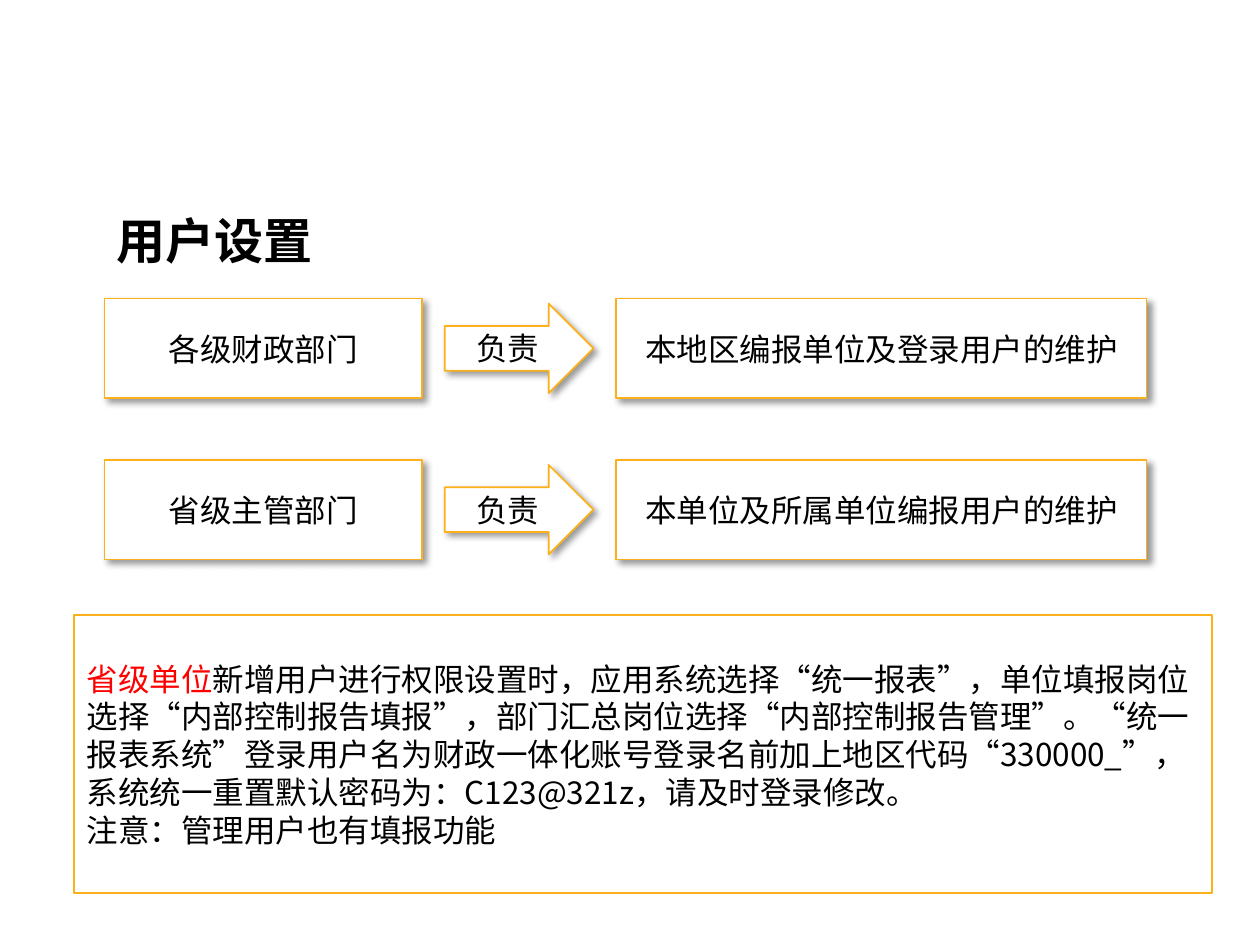
from dataclasses import dataclass

from lxml import etree
from pptx import Presentation
from pptx.dml.color import RGBColor
from pptx.enum.shapes import MSO_SHAPE
from pptx.enum.text import MSO_ANCHOR, MSO_AUTO_SIZE, PP_ALIGN
from pptx.oxml.ns import qn
from pptx.util import Inches, Pt

RECTANGLE = MSO_SHAPE.RECTANGLE
ARROW = MSO_SHAPE.RIGHT_ARROW
PROCESS = MSO_SHAPE.FLOWCHART_PROCESS
MIDDLE, TOP = MSO_ANCHOR.MIDDLE, MSO_ANCHOR.TOP
CENTER, LEFT = PP_ALIGN.CENTER, PP_ALIGN.LEFT
GROW = MSO_AUTO_SIZE.SHAPE_TO_FIT_TEXT

COLORS = {
    "white": "FFFFFF",
    "border": "FCB11C",
    "text": "000000",
    "emphasis": "FF0000",
    "shadow": "000000",
}
FONT = "Noto Sans CJK SC"
ROW_TOP, ROW_PITCH, BOX_HEIGHT = 2.37, 1.28, 0.79
ARROW_HEIGHT = 0.71


@dataclass
class TextRun:
    text: str
    color: str = "text"
    size: int = 18
    bold: bool = False


@dataclass
class Panel:
    left: float
    top: float
    width: float
    height: float
    paragraphs: list[list[TextRun]]
    kind: MSO_SHAPE = RECTANGLE
    alignment: PP_ALIGN = CENTER
    anchor: MSO_ANCHOR = MIDDLE
    outlined: bool = True
    shadowed: bool = True


@dataclass
class Duty:
    department: str
    task: str


DUTIES = [
    Duty("各级财政部门", "本地区编报单位及登录用户的维护"),
    Duty("省级主管部门", "本单位及所属单位编报用户的维护"),
]
INSTRUCTIONS = [
    [
        TextRun("省级单位", "emphasis"),
        TextRun(
            "新增用户进行权限设置时，应用系统选择“统一报表”，单位填报岗位"
            "选择“内部控制报告填报”，部门汇总岗位选择“内部控制报告管理”。"
            "“统一报表系统”登录用户名为财政一体化账号登录名前加上地区代码"
            "“330000_”，系统统一重置默认密码为：C123@321z，请及时登录修改。"
        ),
    ],
    [TextRun("注意：管理用户也有填报功能")],
]


def rgb(name: str) -> RGBColor:
    return RGBColor.from_string(COLORS[name])


def add_shadow(shape) -> None:
    effects = shape._element.spPr.find(qn("a:effectLst"))
    shadow = etree.SubElement(
        effects, qn("a:outerShdw"),
        blurRad=str(Pt(4)), dist=str(Pt(3)), dir=str(45 * 60000),
        algn="tl", rotWithShape="0",
    )
    color = etree.SubElement(shadow, qn("a:srgbClr"), val=COLORS["shadow"])
    etree.SubElement(color, qn("a:alpha"), val="40000")


def add_run(paragraph, text_run: TextRun) -> None:
    run = paragraph.add_run()
    run.text = text_run.text
    run.font.size = Pt(text_run.size)
    run.font.bold = text_run.bold
    run.font.color.rgb = rgb(text_run.color)
    run.font.name = FONT
    etree.SubElement(run.font._element, qn("a:ea"), typeface=FONT)


def add_panel(slide, panel: Panel):
    shape = slide.shapes.add_shape(
        panel.kind, Inches(panel.left), Inches(panel.top),
        Inches(panel.width), Inches(panel.height),
    )
    shape.fill.solid()
    shape.fill.fore_color.rgb = rgb("white")
    if panel.outlined:
        shape.line.color.rgb = rgb("border")
        shape.line.width = Pt(1)
    else:
        shape.line.fill.background()
    shape.shadow.inherit = False
    if panel.shadowed:
        add_shadow(shape)
    frame = shape.text_frame
    frame.word_wrap = True
    frame.vertical_anchor = panel.anchor
    for index, text_runs in enumerate(panel.paragraphs):
        paragraph = frame.add_paragraph() if index else frame.paragraphs[0]
        paragraph.alignment = panel.alignment
        for text_run in text_runs:
            add_run(paragraph, text_run)
    return shape


def add_duty(slide, duty: Duty, top: float) -> None:
    arrow_top = top + (BOX_HEIGHT - ARROW_HEIGHT) / 2
    add_panel(slide, Panel(3.53, arrow_top, 1.18, ARROW_HEIGHT,
                           [[TextRun("负责")]], ARROW))
    add_panel(slide, Panel(0.83, top, 2.52, BOX_HEIGHT,
                           [[TextRun(duty.department)]]))
    add_panel(slide, Panel(4.89, top, 4.21, BOX_HEIGHT,
                           [[TextRun(duty.task)]]))


def main() -> None:
    presentation = Presentation()
    presentation.slide_width = Inches(10)
    presentation.slide_height = Inches(7.5)
    slide = presentation.slides.add_slide(presentation.slide_layouts[6])
    for index, duty in enumerate(DUTIES):
        add_duty(slide, duty, ROW_TOP + index * ROW_PITCH)
    add_panel(slide, Panel(0.59, 4.88, 9.03, 2.21, INSTRUCTIONS, PROCESS,
                           LEFT, shadowed=False))
    title = add_panel(slide, Panel(
        0.83, 1.62, 8.66, 0.57, [[TextRun("用户设置", size=28, bold=True)]],
        alignment=LEFT, anchor=TOP, outlined=False, shadowed=False,
    ))
    title.text_frame.auto_size = GROW
    presentation.save("out.pptx")


if __name__ == "__main__":
    main()
